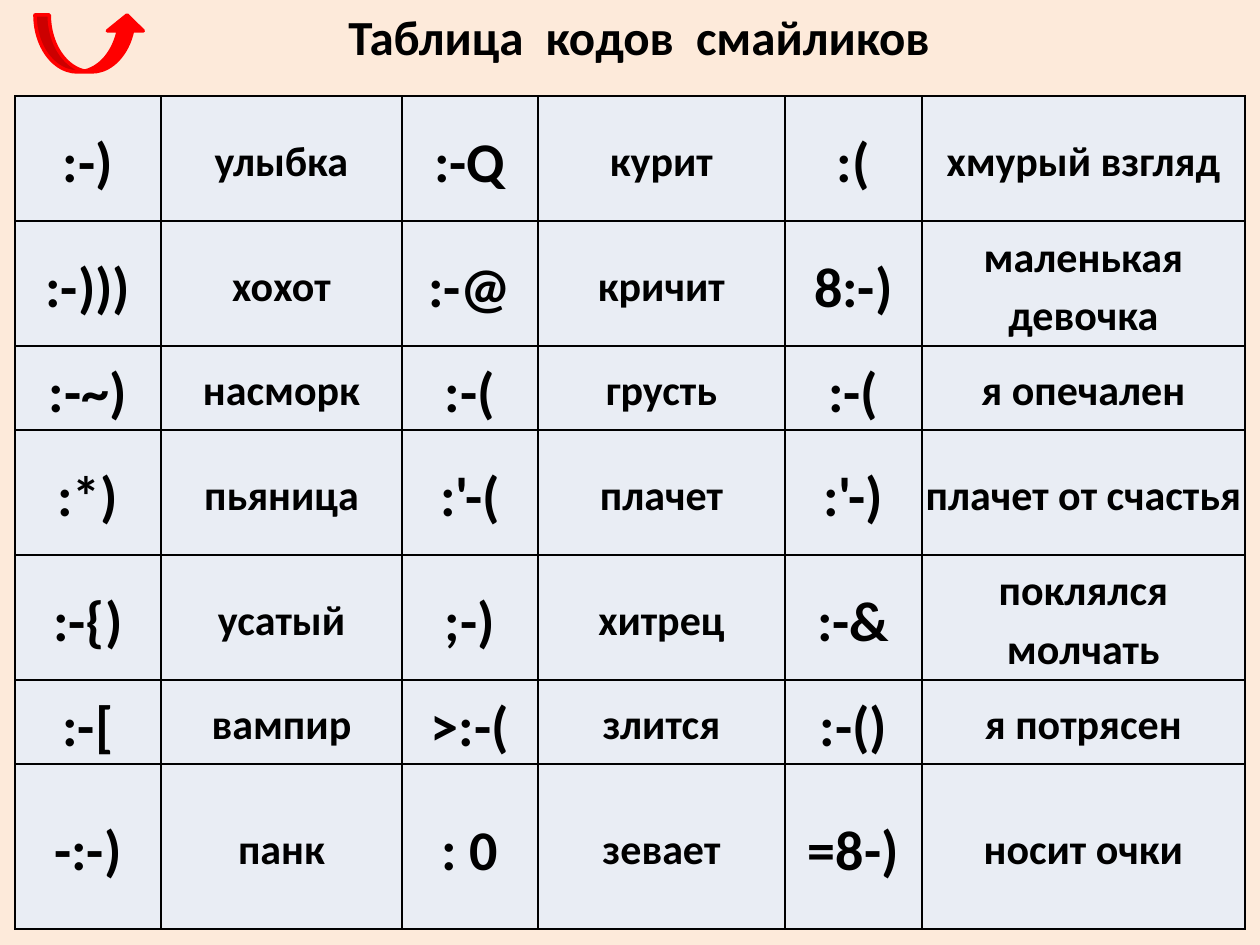
from pptx import Presentation
from pptx.dml.color import RGBColor
from pptx.enum.shapes import MSO_SHAPE
from pptx.enum.text import MSO_ANCHOR, PP_ALIGN
from pptx.oxml.ns import qn
from pptx.util import Pt
from lxml.etree import SubElement

PX = 914400 // 126  # EMU in one px
BLACK = RGBColor(0, 0, 0)
RED = RGBColor(0xFF, 0, 0)
PEACH = RGBColor(0xFD, 0xEA, 0xDA)
PALE = RGBColor(0xE9, 0xED, 0xF4)

COLS = [146, 241, 136, 247, 137, 323]
ROWS = [125, 125, 84, 125, 125, 84, 165]
SMILEYS = [
    [":-)", "улыбка", ":-Q", "курит", ":(", "хмурый взгляд"],
    [":-)))", "хохот", ":-@", "кричит", "8:-)", "маленькая девочка"],
    [":-~)", "насморк", ":-(", "грусть", ":-(", "я опечален"],
    [":*)", "пьяница", ":'-(", "плачет", ":'-)", "плачет от счастья"],
    [":-{)", "усатый", ";-)", "хитрец", ":-&", "поклялся молчать"],
    [":-[", "вампир", ">:-(", "злится", ":-()", "я потрясен"],
    ["-:-)", "панк", ": 0", "зевает", "=8-)", "носит очки"],
]


class Deck:
    def __init__(self, width, height):
        self.prs = Presentation()
        self.prs.slide_width = width * PX
        self.prs.slide_height = height * PX
        self.font = "Calibri"

    def page(self, color):
        self.slide = self.prs.slides.add_slide(self.prs.slide_layouts[5])
        fill = self.slide.background.fill
        fill.solid()
        fill.fore_color.rgb = color

    def style(self, para, size):
        para.alignment = PP_ALIGN.CENTER
        font = para.font
        font.name, font.size, font.bold = self.font, Pt(size), True
        font.color.rgb = BLACK

    def title(self, text, left, top, width, height):
        box = self.slide.shapes.title
        box.left, box.top = left * PX, top * PX
        box.width, box.height = width * PX, height * PX
        frame = box.text_frame
        frame.text = text
        frame.word_wrap = False
        frame.vertical_anchor = MSO_ANCHOR.TOP
        self.style(frame.paragraphs[0], 28)

    def border(self, cell):
        props = cell._tc.get_or_add_tcPr()
        for side in ("a:lnL", "a:lnR", "a:lnT", "a:lnB"):
            line = SubElement(props, qn(side), w=str(Pt(1)))
            fill = SubElement(line, qn("a:solidFill"))
            SubElement(fill, qn("a:srgbClr"), val=str(BLACK))

    def cell(self, cell, text, size):
        cell.text = text
        cell.vertical_anchor = MSO_ANCHOR.MIDDLE
        cell.margin_left = cell.margin_right = PX
        cell.margin_top = cell.margin_bottom = PX
        para = cell.text_frame.paragraphs[0]
        para.line_spacing = 1.15
        self.style(para, size)
        # Borders come before the fill in the cell's XML
        self.border(cell)
        cell.fill.solid()
        cell.fill.fore_color.rgb = PALE

    def table(self, data, left, top, cols, rows):
        grid = self.slide.shapes.add_table(
            len(rows), len(cols), left * PX, top * PX,
            sum(cols) * PX, sum(rows) * PX).table
        grid.first_row = grid.horz_banding = False
        for col, width in zip(grid.columns, cols):
            col.width = width * PX
        for row, height, texts in zip(grid.rows, rows, data):
            row.height = height * PX
            for i, (cell, text) in enumerate(zip(row.cells, texts)):
                self.cell(cell, text, 24 if i % 2 else 32)

    def arrow(self, left, top, width, height, color):
        shape = self.slide.shapes.add_shape(
            MSO_SHAPE.CURVED_UP_ARROW,
            left * PX, top * PX, width * PX, height * PX)
        shape.shadow.inherit = False
        for i, value in enumerate((0.25, 0.63, 0.28)):
            shape.adjustments[i] = value
        shape.fill.solid()
        shape.fill.fore_color.rgb = color
        shape.line.color.rgb = color
        shape.line.width = Pt(2)


def main():
    deck = Deck(1260, 945)
    deck.page(PEACH)
    # Heading
    deck.title("Таблица  кодов  смайликов", 333, 0, 612, 72)
    # Codes and their meanings
    deck.table(SMILEYS, 15, 96, COLS, ROWS)
    # Return arrow
    deck.arrow(35, 15, 110, 57, RED)
    deck.prs.save("out.pptx")


if __name__ == "__main__":
    main()
